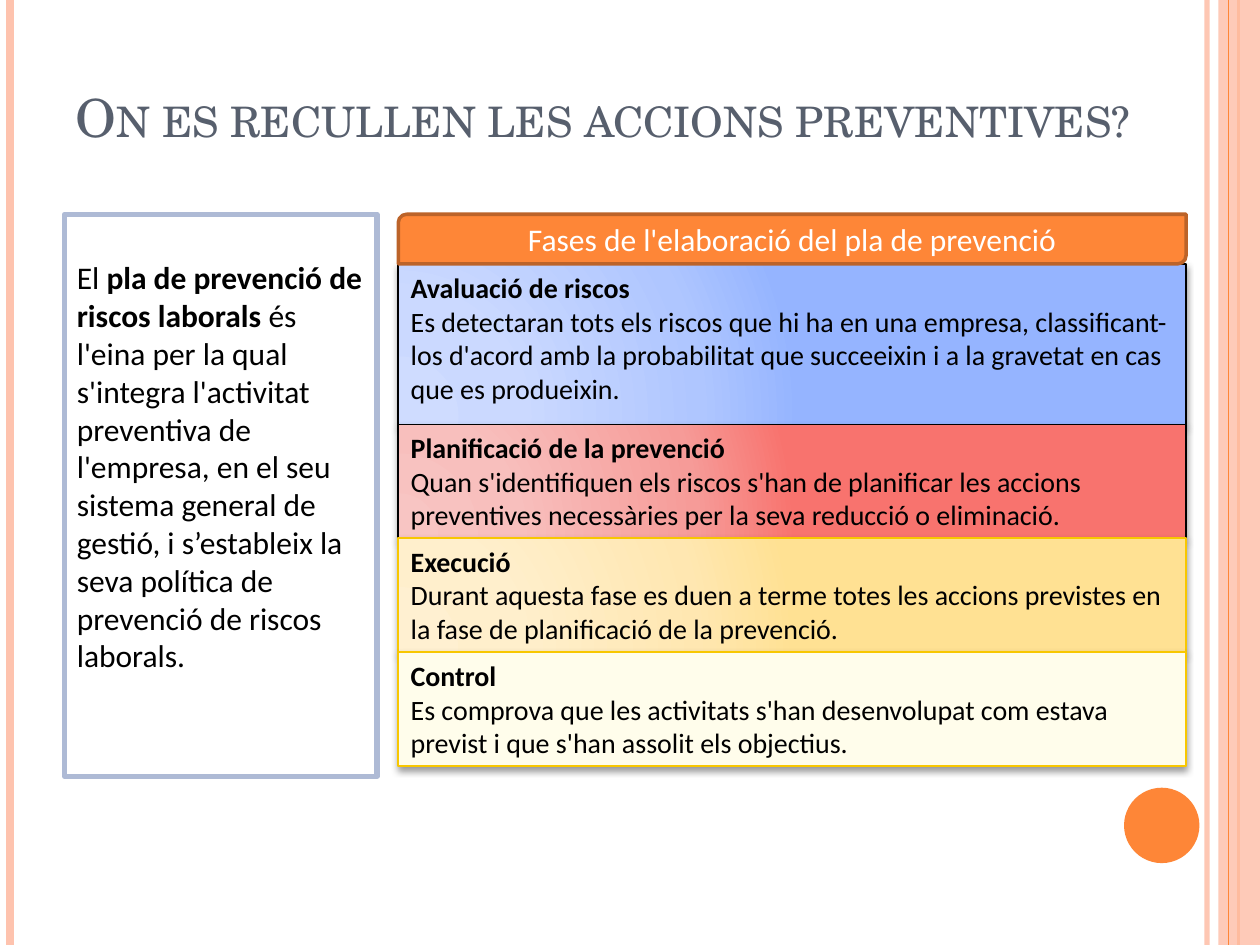
import pptx
import pptx.util
import pptx.oxml
import pptx.dml.color
import pptx.enum.shapes
import pptx.enum.text
from lxml import etree

Cm = pptx.util.Cm
Pt = pptx.util.Pt
RGBColor = pptx.dml.color.RGBColor
Kind = pptx.enum.shapes.MSO_SHAPE
Anchor = pptx.enum.text.MSO_ANCHOR
Align = pptx.enum.text.PP_ALIGN

SPACE = "http://schemas.openxmlformats.org/drawingml/2006/main"
BLACK = RGBColor(0x00, 0x00, 0x00)
WHITE = RGBColor(0xFF, 0xFF, 0xFF)
ORANGE = RGBColor(0xFE, 0x86, 0x37)
BROWN = RGBColor(0xBC, 0x63, 0x29)
PEACH = RGBColor(0xFE, 0xC3, 0xAE)
SLATE = RGBColor(0x57, 0x5F, 0x6D)
STEEL = RGBColor(0xAE, 0xBA, 0xD5)
GOLD = RGBColor(0xF8, 0xC7, 0x00)
CREAM = RGBColor(0xFF, 0xFD, 0xEB)
STOPS = (0, 30, 75, 100)
BLUES = ("CFDCFF", "CBD9FF", "AFC6FF", "95B4FF")
REDS = ("F8C5C3", "F8BFBD", "F69B98", "F8736E")
YELLOWS = ("FFF0D1", "FFEFCC", "FFE7B1", "FFE193")

TALL = 19.05
LEFT = 8.03
WIDE = 15.88

PHASES = [
    (5.33, 3.23, BLUES, BLACK, "Avaluació de riscos",
     "Es detectaran tots els riscos que hi ha en una empresa, classificant-los "
     "d'acord amb la probabilitat que succeeixin i a la gravetat en cas que es "
     "produeixin."),
    (8.56, 2.3, REDS, BLACK, "Planificació de la prevenció",
     "Quan s'identifiquen els riscos s'han de planificar les accions "
     "preventives necessàries per la seva reducció o eliminació."),
    (10.85, 2.3, YELLOWS, GOLD, "Execució",
     "Durant aquesta fase es duen a terme totes les accions previstes en la "
     "fase de planificació de la prevenció."),
    (13.15, 2.3, CREAM, GOLD, "Control",
     "Es comprova que les activitats s'han desenvolupat com estava previst i "
     "que s'han assolit els objectius."),
]


def tag(name):
    return f"{{{SPACE}}}{name}"


def fade(part, share):
    for color in part.iter(tag("srgbClr")):
        etree.SubElement(color, tag("alpha"), val=str(share * 1000))


def blend(shape, tones):
    stops = "".join(
        f'<a:gs pos="{stop * 1000}"><a:srgbClr val="{tone}"/></a:gs>'
        for stop, tone in zip(STOPS, tones))
    shape._element.spPr.append(pptx.oxml.parse_xml(
        f'<a:gradFill xmlns:a="{SPACE}" rotWithShape="1"><a:gsLst>{stops}</a:gsLst>'
        '<a:path path="circle"><a:fillToRect l="5000" t="100000" r="120000" '
        'b="10000"/></a:path></a:gradFill>'))


def shade(shape):
    effect = shape._element.spPr.find(tag("effectLst"))
    effect.append(pptx.oxml.parse_xml(
        f'<a:outerShdw xmlns:a="{SPACE}" blurRad="{Pt(4)}" dist="{Pt(2)}" '
        'dir="5400000" rotWithShape="0"><a:srgbClr val="000000">'
        '<a:alpha val="40000"/></a:srgbClr></a:outerShdw>'))


def add_line(slide, x, color, weight):
    line = slide.shapes.add_connector(
        pptx.enum.shapes.MSO_CONNECTOR.STRAIGHT, Cm(x), 0, Cm(x), Cm(TALL))
    line.line.color.rgb = color
    line.line.width = Pt(weight)
    etree.SubElement(line._element.spPr, tag("effectLst"))
    return line


def add_block(slide, kind, place, fill, edge=None, weight=1):
    shape = slide.shapes.add_shape(kind, *map(Cm, place))
    if isinstance(fill, RGBColor):
        shape.fill.solid()
        shape.fill.fore_color.rgb = fill
    else:
        blend(shape, fill)
    shape.shadow.inherit = False
    if edge is None:
        shape.line.fill.background()
    else:
        shape.line.color.rgb = edge
        shape.line.width = Pt(weight)
    shape.text_frame.word_wrap = True
    return shape


def style(para, size, color, bold=False, face="Calibri", align=Align.LEFT):
    para.alignment = align
    for run in para.runs:
        run.font.size = Pt(size)
        run.font.name = face
        run.font.color.rgb = color
        run.font.bold = bold


def add_frame(slide):
    fade(add_line(slide, 24.33, PEACH, 3)._element, 93)
    add_line(slide, 0.2, PEACH, 4.5)
    add_line(slide, 24.97, ORANGE, 1.5)
    band = add_block(slide, Kind.RECTANGLE, (24.56, 0, 0.84, TALL), PEACH)
    fade(band._element, 87)
    add_line(slide, 24.77, ORANGE, 0.75)
    add_block(slide, Kind.OVAL, (22.66, 15.88, 1.52, 1.52), ORANGE)


def add_title(slide):
    box = slide.shapes.add_textbox(Cm(1.27), Cm(0.76), Cm(23.04), Cm(3.18))
    frame = box.text_frame
    frame.word_wrap = True
    frame.vertical_anchor = Anchor.MIDDLE
    frame.text = "On es recullen les accions preventives?"
    para = frame.paragraphs[0]
    style(para, 30, SLATE, face="TeX Gyre Schola")
    para.runs[0].font._element.set("cap", "small")


def add_panel(slide):
    panel = add_block(
        slide, Kind.RECTANGLE, (1.3, 4.32, 6.3, 11.33), WHITE, STEEL, 3)
    frame = panel.text_frame
    frame.vertical_anchor = Anchor.TOP
    frame.margin_top = Cm(0.89)
    para = frame.paragraphs[0]
    for text in (
            "El ", "pla de prevenció de riscos laborals",
            " és l'eina per la qual s'integra l'activitat preventiva de "
            "l'empresa, en el seu sistema general de gestió, i s’estableix la "
            "seva política de prevenció de riscos laborals."):
        para.add_run().text = text
    style(para, 18, BLACK)
    para.runs[1].font.bold = True


def add_phase(slide, top, height, fill, edge, head, body):
    block = add_block(
        slide, Kind.RECTANGLE, (LEFT, top, WIDE, height), fill, edge)
    shade(block)
    frame = block.text_frame
    frame.vertical_anchor = Anchor.TOP
    frame.text = f"{head}\n{body}"
    first, second = frame.paragraphs
    style(first, 16, BLACK, bold=True)
    style(second, 16, BLACK)


def add_header(slide):
    block = add_block(slide, Kind.ROUND_2_DIAG_RECTANGLE,
                      (LEFT, 4.32, WIDE, 1), ORANGE, BROWN, 2)
    frame = block.text_frame
    frame.vertical_anchor = Anchor.MIDDLE
    frame.text = "Fases de l'elaboració del pla de prevenció"
    style(frame.paragraphs[0], 18, WHITE, align=Align.CENTER)


def main():
    deck = pptx.Presentation()
    deck.slide_width = Cm(25.4)
    deck.slide_height = Cm(TALL)
    slide = deck.slides.add_slide(deck.slide_layouts[6])
    add_frame(slide)
    add_title(slide)
    add_panel(slide)
    for phase in PHASES:
        add_phase(slide, *phase)
    add_header(slide)
    deck.save("out.pptx")


if __name__ == "__main__":
    main()
